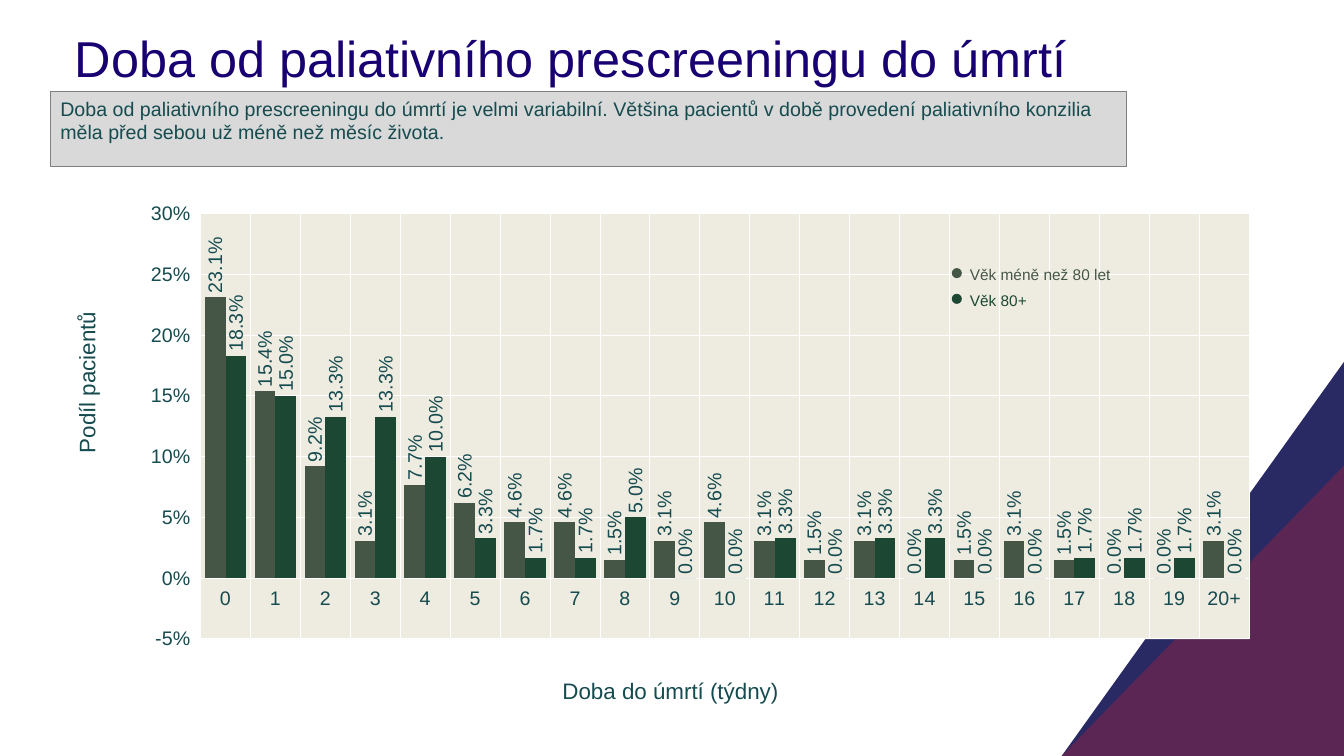
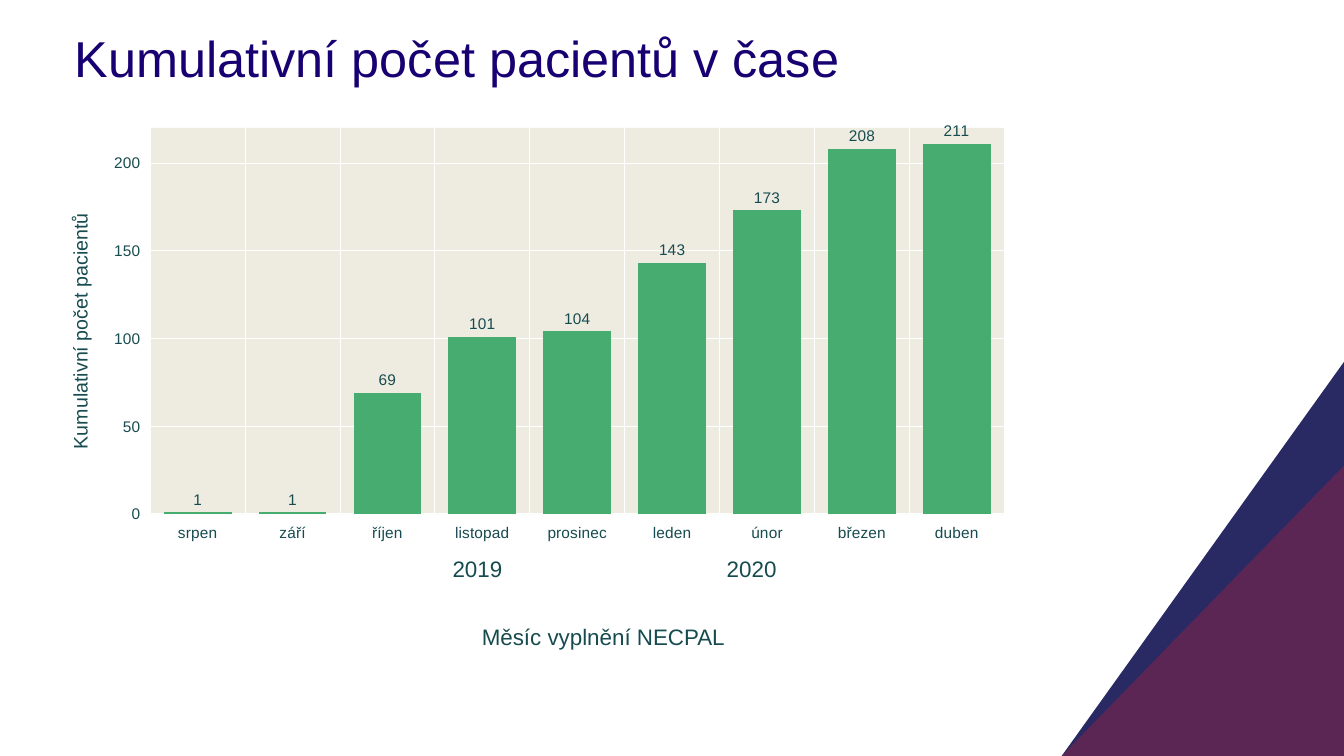
from dataclasses import dataclass
from typing import NamedTuple

from pptx import Presentation
from pptx.chart.data import CategoryChartData
from pptx.dml.color import RGBColor
from pptx.enum.chart import XL_CHART_TYPE as ChartType
from pptx.enum.chart import XL_LABEL_POSITION as LabelPosition
from pptx.enum.chart import XL_TICK_MARK as TickMark
from pptx.enum.shapes import MSO_SHAPE as ShapeKind
from pptx.enum.text import MSO_ANCHOR as Anchor
from pptx.enum.text import MSO_AUTO_SIZE as AutoSize
from pptx.enum.text import PP_ALIGN as Align
from pptx.oxml import parse_xml
from pptx.oxml.ns import nsdecls
from pptx.util import Inches, Pt

PAGE_WIDTH, PAGE_HEIGHT = 13.33, 7.5


@dataclass(frozen=True)
class Theme:
    font: str = "Arial"
    title: str = "180072"
    text: str = "164B4F"
    navy: str = "292A64"
    plum: str = "5B2654"
    note_fill: str = "D9D9D9"
    note_line: str = "808080"
    plot_fill: str = "EEECE1"
    grid: str = "FFFFFF"
    younger: str = "455647"
    older: str = "1C4833"
    total: str = "46AC6F"
    title_size: int = 36
    axis_title_size: int = 16
    body_size: int = 14
    small_size: int = 11


THEME = Theme()


class Box(NamedTuple):
    left: float
    top: float
    width: float
    height: float

    def lengths(self):
        return [Inches(value) for value in self]


def style_font(font, size, color=THEME.text):
    font.name = THEME.font
    font.size = Pt(size)
    font.color.rgb = RGBColor.from_string(color)


def add_filled(slide, kind, box, fill, line=None):
    shape = slide.shapes.add_shape(kind, *box.lengths())
    shape.shadow.inherit = False
    shape.fill.solid()
    shape.fill.fore_color.rgb = RGBColor.from_string(fill)
    if line:
        shape.line.color.rgb = RGBColor.from_string(line)
        shape.line.width = Pt(0.75)
    else:
        shape.line.fill.background()
    return shape


def add_label(slide, box, text, size, color=THEME.text, rotation=0):
    label = slide.shapes.add_textbox(*box.lengths())
    label.rotation = rotation
    frame = label.text_frame
    frame.word_wrap = True
    frame.text = text
    style_font(frame.paragraphs[0].font, size, color)


def add_note(slide, box, text):
    note = add_filled(slide, ShapeKind.RECTANGLE, box, THEME.note_fill, THEME.note_line)
    frame = note.text_frame
    frame.word_wrap = True
    frame.vertical_anchor = Anchor.TOP
    frame.text = text
    para = frame.paragraphs[0]
    para.alignment = Align.LEFT
    style_font(para.font, THEME.body_size)


def add_legend(slide, box, entries):
    row_height = box.height / len(entries)
    for row, (name, color) in enumerate(entries):
        top = box.top + row * row_height
        add_label(slide, Box(box.left + 0.08, top, box.width - 0.08, 0.29),
                  name, THEME.small_size, color)
        add_filled(slide, ShapeKind.OVAL, Box(box.left, top + 0.08, 0.1, 0.1), color)


def style_axis(axis, size):
    axis.major_tick_mark = TickMark.OUTSIDE
    axis.format.line.fill.background()
    axis.has_major_gridlines = True
    grid = axis.major_gridlines.format.line
    grid.color.rgb = RGBColor.from_string(THEME.grid)
    grid.width = Pt(0.75)
    style_font(axis.tick_labels.font, size)


def set_plot_area(chart, box, plot):
    """Fix the inner plot box inside the chart box and fill only the plot."""
    parts = {
        "x": (plot.left - box.left) / box.width,
        "y": (plot.top - box.top) / box.height,
        "w": plot.width / box.width,
        "h": plot.height / box.height,
    }
    places = "".join(f'<c:{key} val="{value:.4f}"/>' for key, value in parts.items())
    area = chart.element.xpath("c:chart/c:plotArea")[0]
    for layout in area.xpath("c:layout"):
        area.remove(layout)
    area.insert(0, parse_xml(
        f'<c:layout {nsdecls("c")}><c:manualLayout><c:layoutTarget val="inner"/>'
        f'<c:xMode val="edge"/><c:yMode val="edge"/>{places}</c:manualLayout></c:layout>'))
    area.append(parse_xml(
        f'<c:spPr {nsdecls("c", "a")}><a:solidFill><a:srgbClr val="{THEME.plot_fill}"/>'
        '</a:solidFill></c:spPr>'))
    chart.element.xpath("c:chart")[0].addnext(parse_xml(
        f'<c:spPr {nsdecls("c", "a")}><a:noFill/><a:ln><a:noFill/></a:ln></c:spPr>'))


def add_columns(slide, box, plot, categories, series, scale, formats, size, upright=False):
    """Scale is (minimum, maximum, step); formats are for axis and data labels."""
    data = CategoryChartData()
    data.categories = categories
    for name, values, _ in series:
        data.add_series(name, values)
    chart = slide.shapes.add_chart(
        ChartType.COLUMN_CLUSTERED, *box.lengths(), data).chart
    chart.has_title = False
    chart.has_legend = False
    style_font(chart.font, size)
    axis_format, label_format = formats

    style_axis(chart.category_axis, size)
    value_axis = chart.value_axis
    style_axis(value_axis, size)
    value_axis.minimum_scale, value_axis.maximum_scale, value_axis.major_unit = scale
    value_axis.tick_labels.number_format = axis_format
    value_axis.tick_labels.number_format_is_linked = False

    columns = chart.plots[0]
    columns.gap_width = 40
    columns.overlap = 0
    columns.vary_by_categories = False
    for column, (_, _, color) in zip(columns.series, series):
        column.format.fill.solid()
        column.format.fill.fore_color.rgb = RGBColor.from_string(color)
        column.invert_if_negative = False
        labels = column.data_labels
        labels.show_value = True
        labels.number_format = label_format
        labels.number_format_is_linked = False
        labels.position = LabelPosition.OUTSIDE_END
        style_font(labels.font, size)
    if upright:
        for body in chart.element.xpath(".//c:dLbls/c:txPr/a:bodyPr"):
            body.set("rot", "-5400000")
            body.set("vert", "horz")
    set_plot_area(chart, box, plot)


def prepare_layout(layout, slide):
    """Give the layout its title box and corner triangles, drawn first on a slide."""
    title = layout.placeholders[0]
    title.left, title.top, title.width, title.height = Box(0.64, 0.21, 10.22, 0.8).lengths()
    width = 2.8
    for height, color in ((3.91, THEME.navy), (2.88, THEME.plum)):
        box = Box(PAGE_WIDTH - (width + height) / 2,
                  PAGE_HEIGHT - (width + height) / 2, height, width)
        triangle = add_filled(slide, ShapeKind.RIGHT_TRIANGLE, box, color)
        triangle.rotation = 270
        layout.shapes.element.append(triangle.element)


def set_title(slide, text):
    frame = slide.shapes.title.text_frame
    frame.text = text
    frame.auto_size = AutoSize.NONE
    frame.vertical_anchor = Anchor.MIDDLE
    para = frame.paragraphs[0]
    para.alignment = Align.LEFT
    para.line_spacing = 0.9
    style_font(para.font, THEME.title_size, THEME.title)


def build_survival(slide):
    set_title(slide, "Doba od paliativního prescreeningu do úmrtí")
    series = [
        ("Věk méně než 80 let",
         [0.231, 0.154, 0.092, 0.031, 0.077, 0.062, 0.046, 0.046, 0.015, 0.031, 0.046,
          0.031, 0.015, 0.031, 0, 0.015, 0.031, 0.015, 0, 0, 0.031], THEME.younger),
        ("Věk 80+",
         [0.183, 0.15, 0.133, 0.133, 0.1, 0.033, 0.017, 0.017, 0.05, 0, 0,
          0.033, 0, 0.033, 0.033, 0, 0, 0.017, 0.017, 0.017, 0], THEME.older),
    ]
    weeks = [str(week) for week in range(20)] + ["20+"]
    add_label(slide, Box(5.48, 6.67, 3.39, 0.37), "Doba do úmrtí (týdny)",
              THEME.axis_title_size)
    add_columns(slide, Box(1.27, 1.92, 11.34, 4.62), Box(1.99, 2.12, 10.4, 4.22),
                weeks, series, (-0.05, 0.3, 0.05), ("0%", "0.0%"),
                THEME.body_size, upright=True)
    add_label(slide, Box(-0.26, 3.29, 2.24, 0.37), "Podíl pacientů",
              THEME.axis_title_size, rotation=270)
    add_legend(slide, Box(9.44, 2.58, 3.17, 0.51),
               [(name, color) for name, _, color in series])
    add_note(slide, Box(0.5, 0.91, 10.67, 0.74),
             "Doba od paliativního prescreeningu do úmrtí je velmi variabilní. "
             "Většina pacientů v době provedení paliativního konzilia "
             "měla před sebou už méně než měsíc života.")


def build_growth(slide):
    set_title(slide, "Kumulativní počet pacientů v čase")
    months = ["srpen", "září", "říjen", "listopad", "prosinec",
              "leden", "únor", "březen", "duben"]
    counts = [1, 1, 69, 101, 104, 143, 173, 208, 211]
    add_label(slide, Box(4.68, 6.13, 3.15, 0.37), "Měsíc vyplnění NECPAL",
              THEME.axis_title_size)
    add_columns(slide, Box(0.95, 1.19, 9.19, 4.27), Box(1.49, 1.27, 8.47, 3.83),
                months, [("Kumulativní počet pacientů", counts, THEME.total)],
                (0, 220, 50), ("#,##0", "#,##0"), THEME.small_size)
    add_label(slide, Box(-0.78, 2.81, 3.15, 0.34), "Kumulativní počet pacientů",
              THEME.body_size, rotation=270)
    for year, left in (("2019", 4.39), ("2020", 7.11)):
        add_label(slide, Box(left, 5.46, 2.04, 0.37), year, THEME.axis_title_size)


def main():
    deck = Presentation()
    deck.slide_width = Inches(PAGE_WIDTH)
    deck.slide_height = Inches(PAGE_HEIGHT)
    layout = deck.slide_layouts.get_by_name("Title Only")
    slides = [deck.slides.add_slide(layout) for _ in range(2)]
    prepare_layout(layout, slides[0])
    build_survival(slides[0])
    build_growth(slides[1])
    deck.save("out.pptx")


if __name__ == "__main__":
    main()
